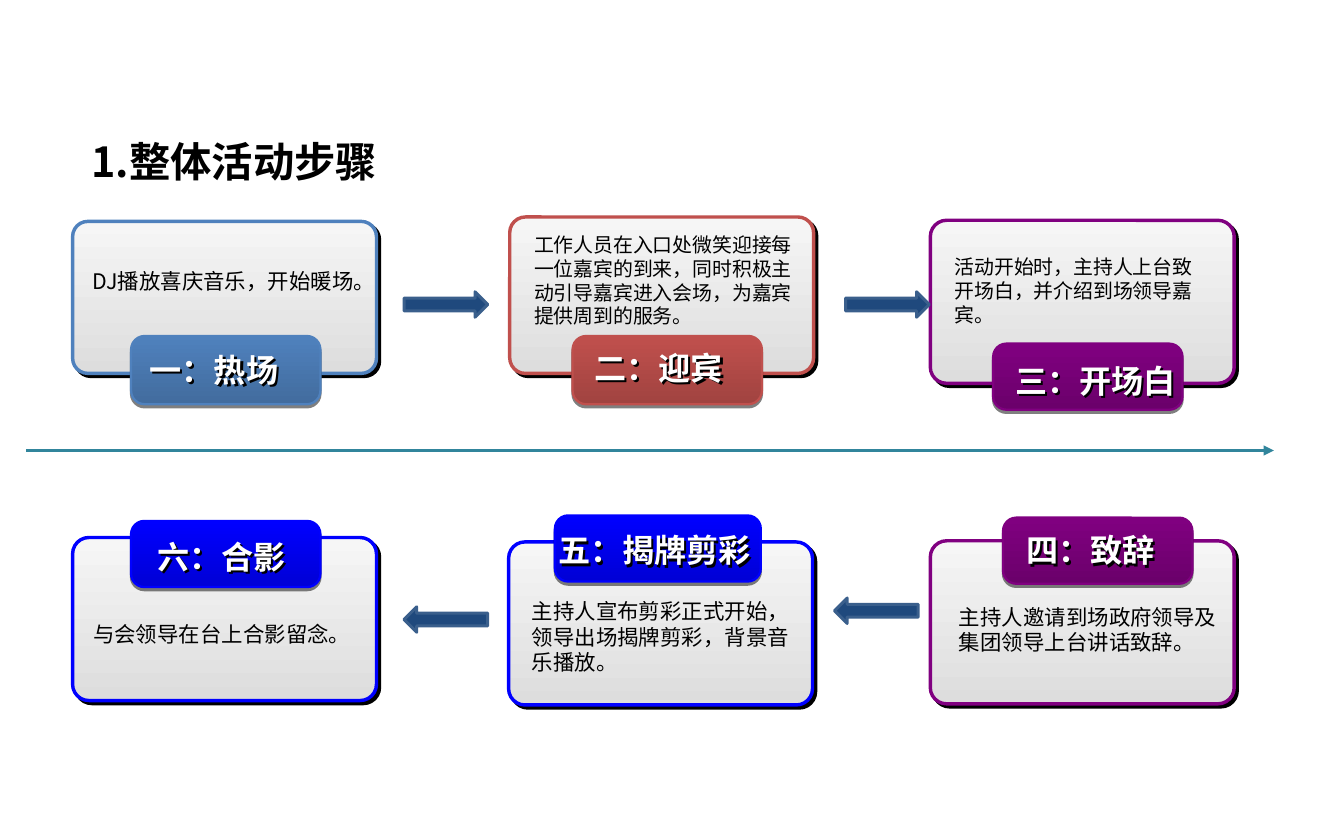
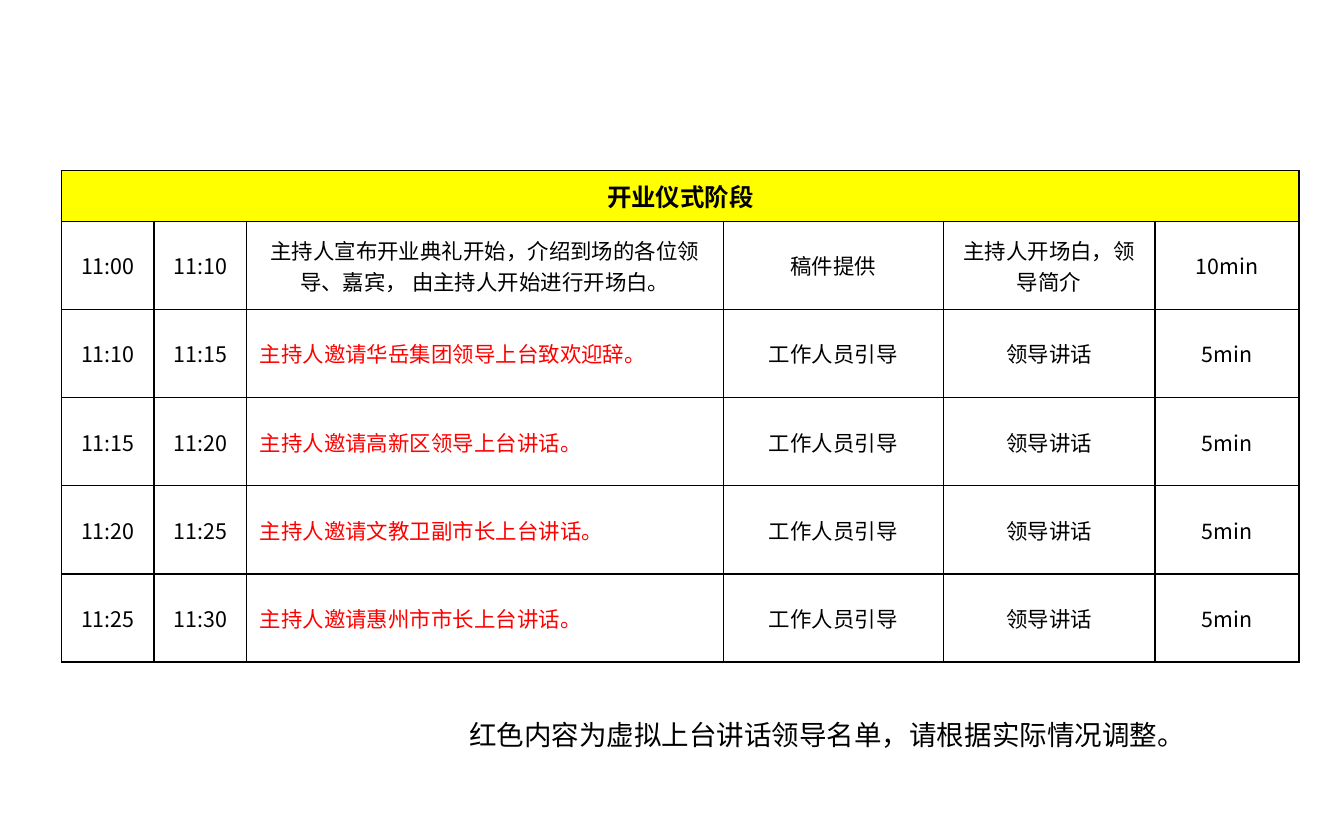
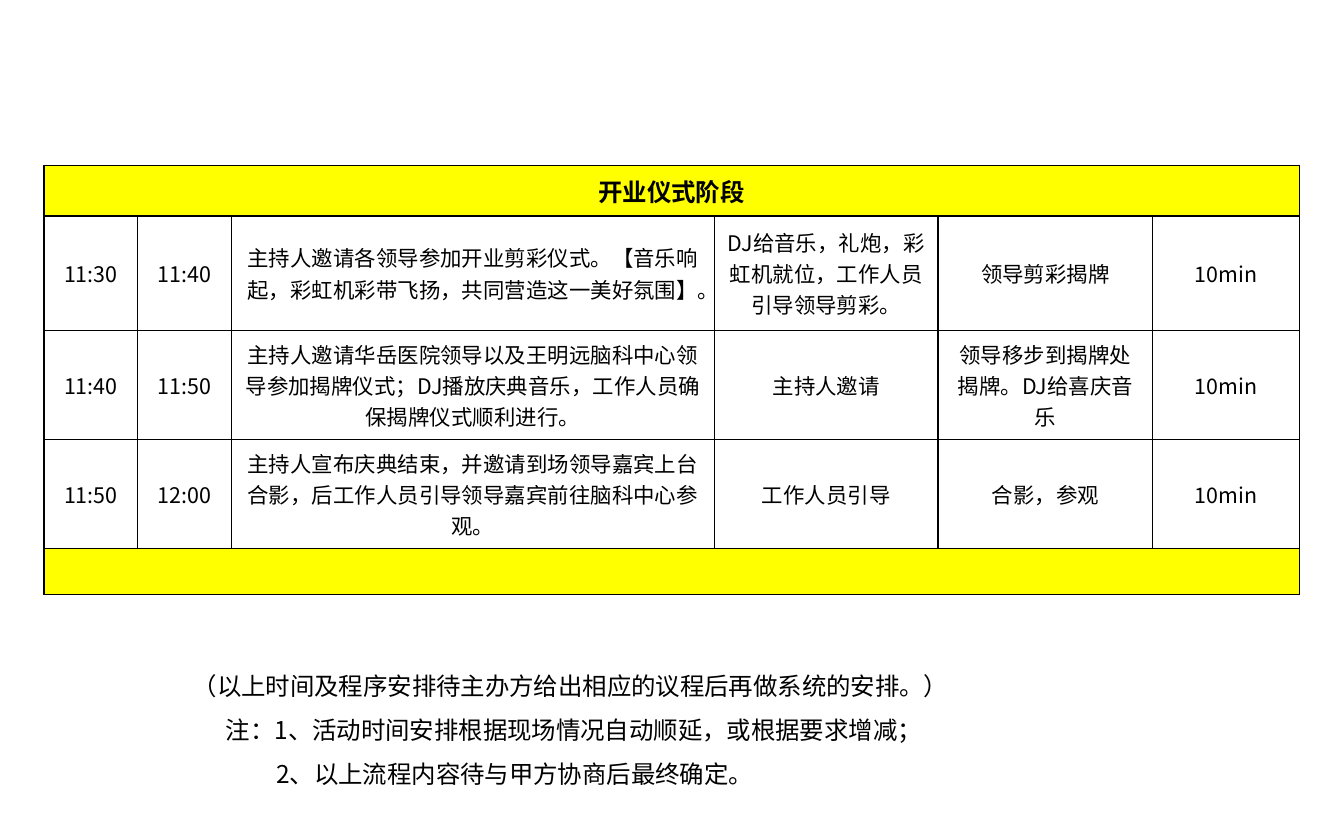
from lxml import etree
from pptx import Presentation
from pptx import util as u
from pptx.dml.color import RGBColor
from pptx.enum import shapes, text
from pptx.oxml import parse_xml
from pptx.oxml.ns import nsdecls, qn

PX = 9144  # 100 px to the inch
FONT = "Noto Sans CJK SC"
BLACK = RGBColor(0x00, 0x00, 0x00)
WHITE = RGBColor(0xFF, 0xFF, 0xFF)
RED = RGBColor(0xFF, 0x00, 0x00)
YELLOW = RGBColor(0xFF, 0xFF, 0x00)
TEAL = RGBColor(0x31, 0x85, 0x9C)
NAVY = RGBColor(0x1F, 0x49, 0x7D)
NAVY_LINE = RGBColor(0x3A, 0x5F, 0x8C)
CARD_TOP = RGBColor(0xF6, 0xF6, 0xF6)
CARD_BOTTOM = RGBColor(0xDD, 0xDD, 0xDD)
STEEL = RGBColor(0x4F, 0x81, 0xBD)
BRICK = RGBColor(0xC0, 0x50, 0x4D)
PURPLE = RGBColor(0x80, 0x00, 0x80)
BLUE = RGBColor(0x00, 0x00, 0xFF)
LEFT, CENTER = text.PP_ALIGN.LEFT, text.PP_ALIGN.CENTER
SHADOW = ('<a:effectLst %s><a:outerShdw dist="%d" dir="%d" algn="ctr" rotWithShape="0">'
          '<a:srgbClr val="000000"><a:alpha val="%d"/></a:srgbClr></a:outerShdw></a:effectLst>')


def write(text_frame, content, size, color=BLACK, bold=False, alignment=LEFT):
    text_frame.text = content
    for paragraph in text_frame.paragraphs:
        paragraph.alignment = alignment
        for run in paragraph.runs:
            run.font.size = u.Pt(size)
            run.font.bold = bold
            run.font.color.rgb = color
            run.font.name = FONT
            etree.SubElement(run.font._element, qn("a:ea"), typeface=FONT)


def add_panel(slide, frame, colors, line_color, line_width, corner, shadow):
    shape = slide.shapes.add_shape(shapes.MSO_SHAPE.ROUNDED_RECTANGLE, *[v * PX for v in frame])
    shape.adjustments[0] = corner
    shape.fill.gradient()
    shape.fill.gradient_angle = 270
    for stop, color, position in zip(shape.fill.gradient_stops, colors, (0, 1)):
        stop.color.rgb = color
        stop.position = position
    shape.line.color.rgb = line_color
    shape.line.width = u.Pt(line_width)
    distance, degrees, opacity = shadow
    shape._element.spPr.append(parse_xml(SHADOW % (
        nsdecls("a"), u.Pt(distance), degrees * 60000, opacity * 1000)))
    return shape


presentation = Presentation()
presentation.slide_width = u.Emu(11161713)
presentation.slide_height = u.Emu(6840538)
title_only, blank = presentation.slide_layouts[5], presentation.slide_layouts[6]
steps_slide = presentation.slides.add_slide(title_only)

# Text boxes of all slides: shape, frame, text, size, colour, bold, alignment
texts = [(steps_slide.shapes.title, (72, 118, 712, 57), "1.整体活动步骤", 27, BLACK, True, LEFT)]

# Steps: accent, card, tab, label place and text, description place, size, alignment and text
steps = [
    (STEEL, (66, 201, 276, 138), (119, 305, 172, 62), (125, 312, 155), "一：热场",
     (73, 237, 272, 35), 14, LEFT, "DJ播放喜庆音乐，开始暖场。"),
    (BRICK, (463, 197, 276, 142), (520, 305, 172, 62), (529, 310, 155), "二：迎宾",
     (474, 205, 261, 99), 13, LEFT,
     "工作人员在入口处微笑迎接每一位嘉宾的到来，同时积极主动引导嘉宾进入会场，为嘉宾提供周到的服务。"),
    (PURPLE, (845, 200, 276, 148), (902, 312, 172, 60), (911, 322, 184), "三：开场白",
     (856, 225, 252, 77), 13, LEFT, "活动开始时，主持人上台致开场白，并介绍到场领导嘉宾。"),
    (PURPLE, (845, 491, 276, 148), (911, 470, 172, 60), (921, 476, 155), "四：致辞",
     (860, 542, 261, 59), 14, LEFT, "主持人邀请到场政府领导及集团领导上台讲话致辞。"),
    (BLUE, (462, 492, 276, 148), (504, 468, 187, 60), (496, 476, 242), "五：揭牌剪彩",
     (472, 537, 266, 82), 14, LEFT, "主持人宣布剪彩正式开始，领导出场揭牌剪彩，背景音乐播放。"),
    (BLUE, (66, 488, 276, 148), (119, 473, 172, 60), (132, 482, 155), "六：合影",
     (71, 558, 261, 35), 14, CENTER, "与会领导在台上合影留念。"),
]
for accent, card, tab, label_place, label, place, size, alignment, description in steps:
    add_panel(steps_slide, card, (CARD_TOP, CARD_BOTTOM), accent, 2.25, 0.1, (2.8, 45, 100))
    tab_shape = add_panel(steps_slide, tab, (accent, accent), accent, 1.5, 0.2, (2, 90, 50))
    # The tab darkens towards its lower edge
    lower_color = tab_shape._element.spPr.findall(".//" + qn("a:gs"))[-1][0]
    etree.SubElement(lower_color, qn("a:shade"), val="67000")
    # The label has no fill, so its shadow falls from the letters
    label_box = steps_slide.shapes.add_textbox(0, 0, 0, 0)
    label_box._element.spPr.append(parse_xml(
        SHADOW % (nsdecls("a"), u.Pt(2), 45 * 60000, 100000)))
    texts.append((label_box, (*label_place, 47), label, 21, WHITE, True, LEFT))
    texts.append((steps_slide.shapes.add_textbox(0, 0, 0, 0), place, description, size,
                  BLACK, False, alignment))

# Timeline between the two rows
timeline = steps_slide.shapes.add_connector(
    shapes.MSO_CONNECTOR.STRAIGHT, 24 * PX, 409 * PX, 1157 * PX, 409 * PX)
timeline.line.color.rgb = TEAL
timeline.line.width = u.Pt(2.25)
etree.SubElement(timeline.line._get_or_add_ln(), qn("a:tailEnd"), type="triangle")
etree.SubElement(timeline._element.spPr, qn("a:effectLst"))

# Arrows from step to step
RIGHT_ARROW, LEFT_ARROW = shapes.MSO_SHAPE.RIGHT_ARROW, shapes.MSO_SHAPE.LEFT_ARROW
for kind, left, top in [(RIGHT_ARROW, 367, 265), (RIGHT_ARROW, 768, 265),
                        (LEFT_ARROW, 758, 543), (LEFT_ARROW, 367, 551)]:
    arrow = steps_slide.shapes.add_shape(kind, left * PX, top * PX, 76 * PX, 23 * PX)
    arrow.shadow.inherit = False
    arrow.fill.solid()
    arrow.fill.fore_color.rgb = NAVY
    arrow.line.color.rgb = NAVY_LINE
    arrow.line.width = u.Pt(2)

# Schedules: a string is a yellow band across the table, a tuple is a row of cells
HEADING = "开业仪式阶段"
speeches = [("11:10", "11:15", "主持人邀请华岳集团领导上台致欢迎辞。"),
            ("11:15", "11:20", "主持人邀请高新区领导上台讲话。"),
            ("11:20", "11:25", "主持人邀请文教卫副市长上台讲话。"),
            ("11:25", "11:30", "主持人邀请惠州市市长上台讲话。")]
schedules = [
    ((56, 155), (84, 84, 433, 200, 192, 131), (46, 80, 80, 80, 80, 80), [
        HEADING,
        ("11:00", "11:10", "主持人宣布开业典礼开始，介绍到场的各位领导、嘉宾， 由主持人开始进行开场白。",
         "稿件提供", "主持人开场白，领导简介", "10min"),
        *[(*speech, "工作人员引导", "领导讲话", "5min") for speech in speeches]],
     (415, 646, 742, 40), 18, "红色内容为虚拟上台讲话领导名单，请根据实际情况调整。"),
    ((40, 150), (85, 85, 439, 203, 195, 133), (45, 104, 98, 98, 42), [
        HEADING,
        ("11:30", "11:40", "主持人邀请各领导参加开业剪彩仪式。【音乐响起，彩虹机彩带飞扬，共同营造这一美好氛围】。",
         "DJ给音乐，礼炮，彩虹机就位，工作人员引导领导剪彩。", "领导剪彩揭牌", "10min"),
        ("11:40", "11:50",
         "主持人邀请华岳医院领导以及王明远脑科中心领导参加揭牌仪式；DJ播放庆典音乐，工作人员确保揭牌仪式顺利进行。",
         "主持人邀请", "领导移步到揭牌处揭牌。DJ给喜庆音乐", "10min"),
        ("11:50", "12:00", "主持人宣布庆典结束，并邀请到场领导嘉宾上台合影，后工作人员引导领导嘉宾前往脑科中心参观。",
         "工作人员引导", "合影，参观", "10min"),
        ""],
     (164, 603, 971, 114), 16,
     "（以上时间及程序安排待主办方给出相应的议程后再做系统的安排。）\n"
     "注：1、活动时间安排根据现场情况自动顺延，或根据要求增减；\n"
     "2、以上流程内容待与甲方协商后最终确定。"),
]
for (left, top), widths, heights, rows, note_place, note_size, note in schedules:
    slide = presentation.slides.add_slide(blank)
    table = slide.shapes.add_table(len(rows), len(widths), left * PX, top * PX,
                                   sum(widths) * PX, sum(heights) * PX).table
    table.first_row = table.horz_banding = False
    for column, width in zip(table.columns, widths):
        column.width = width * PX
    for row, height, content in zip(table.rows, heights, rows):
        row.height = height * PX
        cells = list(row.cells)
        is_band = isinstance(content, str)
        for cell in cells:
            cell.vertical_anchor = text.MSO_ANCHOR.MIDDLE
            cell.margin_left = cell.margin_right = 12 * PX
            cell.margin_top = cell.margin_bottom = (7 if content else 5) * PX
            for side in ("lnL", "lnR", "lnT", "lnB"):
                cell._tc.get_or_add_tcPr().append(parse_xml(
                    f'<a:{side} {nsdecls("a")} w="12700"><a:solidFill>'
                    f'<a:srgbClr val="{BLACK}"/></a:solidFill></a:{side}>'))
            if is_band:
                cell.fill.solid()
                cell.fill.fore_color.rgb = YELLOW
            else:
                cell.fill.background()
        if is_band:
            cells[0].merge(cells[-1])
            write(cells[0].text_frame, content, 16, bold=True, alignment=CENTER)
            continue
        for cell, words in zip(cells, content):
            is_speech = content[:3] in speeches and words == content[2]
            write(cell.text_frame, words, 14, RED if is_speech else BLACK,
                  alignment=LEFT if is_speech else CENTER)
    note_box = slide.shapes.add_textbox(0, 0, 0, 0)
    texts.append((note_box, note_place, note, note_size, BLACK, False, LEFT))

# Place and format every text box
for shape, frame, content, size, color, bold, alignment in texts:
    shape.left, shape.top, shape.width, shape.height = [v * PX for v in frame]
    text_frame = shape.text_frame
    text_frame.word_wrap = True
    text_frame.auto_size = text.MSO_AUTO_SIZE.NONE
    text_frame.vertical_anchor = text.MSO_ANCHOR.TOP
    text_frame.margin_left = text_frame.margin_right = 11 * PX
    text_frame.margin_top = text_frame.margin_bottom = 6 * PX
    write(text_frame, content, size, color, bold, alignment)

# Wider, indented lines in the closing note
for paragraph, indent in zip(note_box.text_frame.paragraphs[1:], (30, 76)):
    paragraph.line_spacing = 1.5
    paragraph._p.get_or_add_pPr().set("marL", str(indent * PX))

presentation.save("out.pptx")
